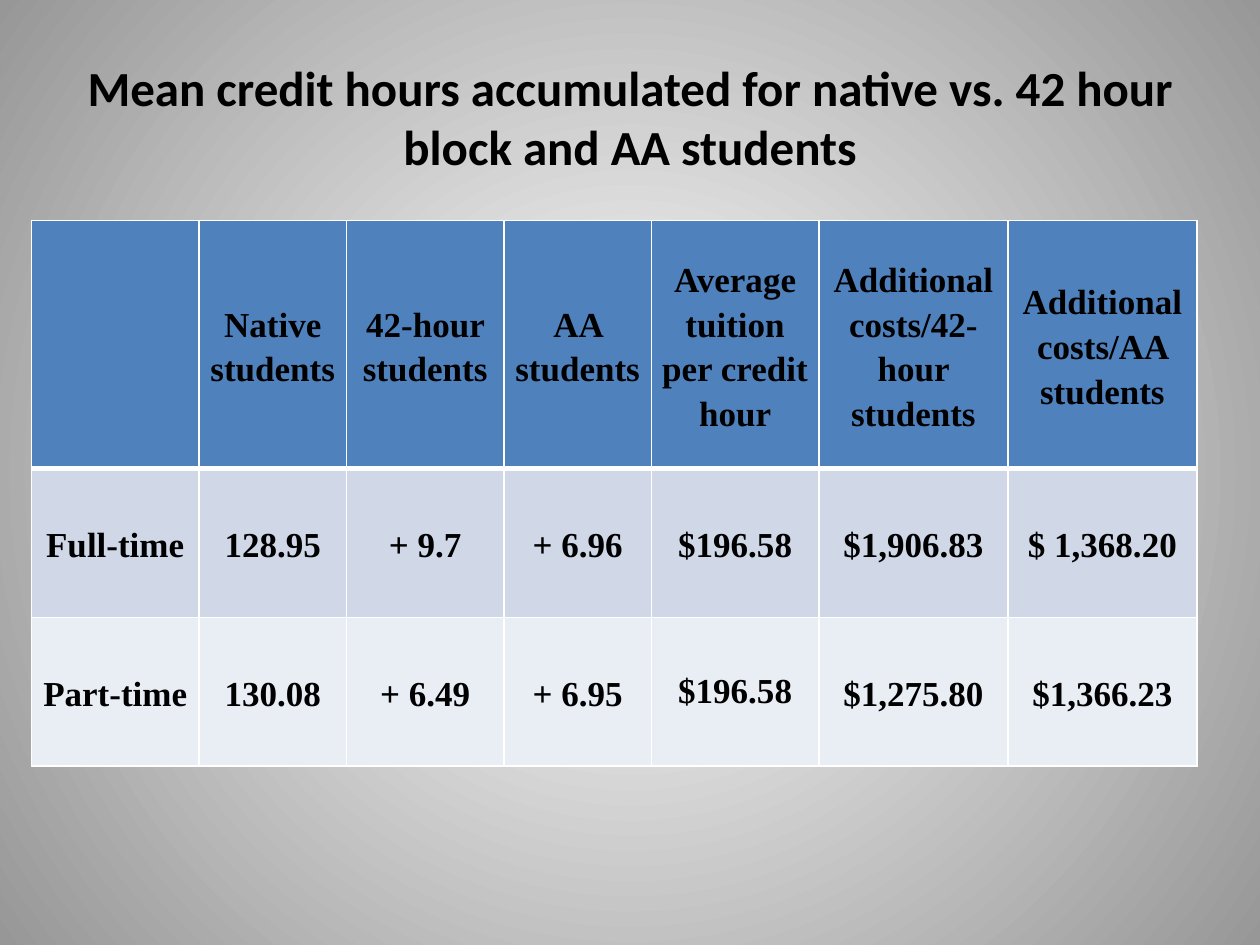
"""Build a slide comparing mean credit hours of native, 42-hour and AA students."""
from dataclasses import dataclass

from lxml import etree
from pptx import Presentation
from pptx import util as u
from pptx.dml.color import RGBColor
from pptx.enum import text
from pptx.oxml.ns import qn


@dataclass(frozen=True)
class Theme:
    ink: str = "000000"
    glow: str = "FFFFFF"
    edge: str = "979797"
    rule: str = "FFFFFF"
    bands: tuple = ("4F81BD", "D0D8E8", "E9EDF4")
    title_font: str = "Calibri"
    title_size: int = 28
    table_font: str = "Times New Roman"
    table_size: int = 20
    thin_rule: int = 1
    header_rule: int = 3


HEADINGS = ["", "Native students", "42-hour students", "AA students",
            "Average tuition per credit hour", "Additional costs/42-hour students",
            "Additional costs/AA students"]
FULL_TIME = ["Full-time", "128.95", "+ 9.7", "+ 6.96", "$196.58", "$1,906.83", "$ 1,368.20"]
PART_TIME = ["Part-time", "130.08", "+ 6.49", "+ 6.95", "$196.58", "$1,275.80", "$1,366.23"]
COLUMN_WIDTHS = [1.33, 1.17, 1.25, 1.17, 1.33, 1.5, 1.5]
ROW_HEIGHTS = [1.97, 1.18, 1.18]
PLAIN_CELL = (2, 4)


def apply(target, formats):
    for name, value in formats.items():
        setattr(target, name, value)


class SlideBuilder:
    def __init__(self, slide, theme):
        self.slide = slide
        self.theme = theme

    def background(self):
        fill = self.slide.background.fill
        fill.gradient()
        for stop, color in zip(fill.gradient_stops, (self.theme.glow, self.theme.edge)):
            stop.color.rgb = RGBColor.from_string(color)
        linear = self.slide.element.find(".//" + qn("a:lin"))
        radial = etree.Element(qn("a:path"), {"path": "circle"})
        etree.SubElement(radial, qn("a:fillToRect"), dict.fromkeys("ltrb", "50000"))
        linear.getparent().replace(linear, radial)

    def wording(self, frame, words, font, size, spacing=1.0):
        paragraph = frame.paragraphs[0]
        paragraph.text = words
        apply(paragraph, {"alignment": text.PP_ALIGN.CENTER, "line_spacing": spacing})
        for run in paragraph.runs:
            apply(run.font, {"name": font, "size": u.Pt(size), "bold": True})
            run.font.color.rgb = RGBColor.from_string(self.theme.ink)

    def title(self, words, left, top, width, height):
        heading = self.slide.shapes.add_textbox(*map(u.Inches, (left, top, width, height)))
        apply(heading.text_frame, {"word_wrap": True,
                                   "vertical_anchor": text.MSO_ANCHOR.MIDDLE})
        self.wording(heading.text_frame, words, self.theme.title_font, self.theme.title_size)

    def borders(self, cell, row):
        properties = cell._tc.get_or_add_tcPr()
        heavy_side = {0: "B", 1: "T"}.get(row)
        for side in "LRTB":
            points = self.theme.header_rule if side == heavy_side else self.theme.thin_rule
            line = etree.SubElement(properties, qn(f"a:ln{side}"), {"w": str(u.Pt(points))})
            solid = etree.SubElement(line, qn("a:solidFill"))
            etree.SubElement(solid, qn("a:srgbClr"), {"val": self.theme.rule})

    def table(self, rows, left, top):
        size = (sum(COLUMN_WIDTHS), sum(ROW_HEIGHTS))
        costs = self.slide.shapes.add_table(
            len(rows), len(COLUMN_WIDTHS), *map(u.Inches, (left, top, *size))).table
        for column, width in zip(costs.columns, COLUMN_WIDTHS):
            column.width = u.Inches(width)
        for line, height in zip(costs.rows, ROW_HEIGHTS):
            line.height = u.Inches(height)
        tight = {"margin_left": u.Inches(0.07), "margin_right": u.Inches(0.07),
                 "margin_top": 0, "margin_bottom": 0}
        for row, entries in enumerate(rows):
            for column, entry in enumerate(entries):
                cell = costs.cell(row, column)
                is_plain = (row, column) == PLAIN_CELL
                cell.vertical_anchor = text.MSO_ANCHOR.MIDDLE
                apply(cell, {} if is_plain else tight)
                self.borders(cell, row)
                cell.fill.solid()
                cell.fill.fore_color.rgb = RGBColor.from_string(self.theme.bands[row])
                self.wording(cell.text_frame, entry, self.theme.table_font,
                             self.theme.table_size, 1.0 if is_plain else 1.15)


def main():
    deck = Presentation()
    apply(deck, {"slide_width": u.Inches(10), "slide_height": u.Inches(7.5)})
    builder = SlideBuilder(deck.slides.add_slide(deck.slide_layouts[6]), Theme())
    builder.background()
    builder.title("Mean credit hours accumulated for native vs. 42 hour block and AA students",
                  0.5, 0.3, 9, 1.25)
    builder.table([HEADINGS, FULL_TIME, PART_TIME], 0.25, 1.75)
    deck.save("out.pptx")


if __name__ == "__main__":
    main()
